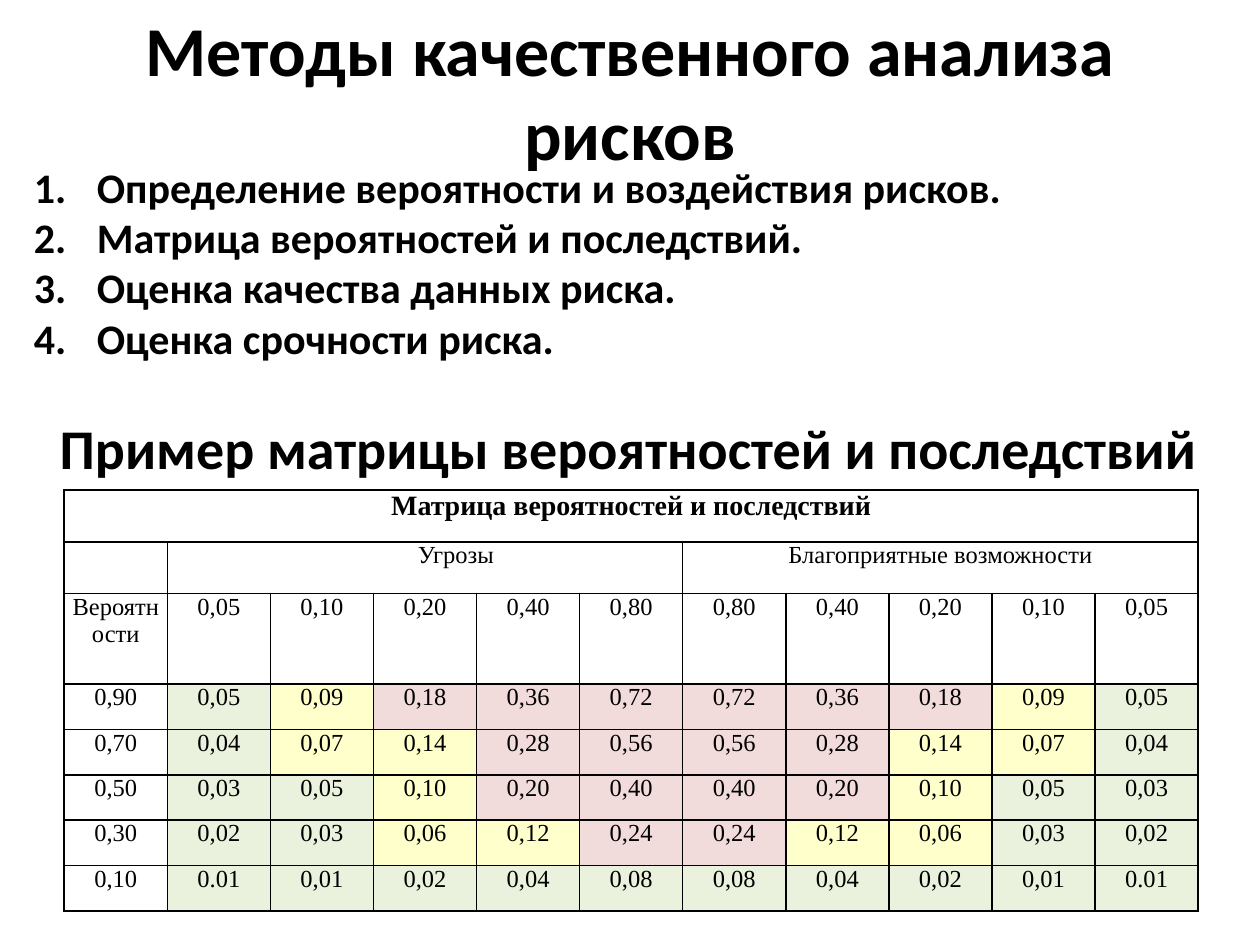
from lxml import etree
from pptx import Presentation
from pptx.dml.color import RGBColor
from pptx.enum.text import PP_ALIGN
from pptx.oxml.ns import qn
from pptx.util import Inches, Pt

CENTER = PP_ALIGN.CENTER
LEFT = PP_ALIGN.LEFT
HEADING_FONT = "Calibri"
TABLE_FONT = "Times New Roman"
COLORS = {
    "text": "000000",
    "border": "000000",
    "low": "EAF1DD",
    "medium": "FFFFCC",
    "high": "F2DBDB",
}
LEVELS = {"L": "low", "M": "medium", "H": "high"}

TITLE = "Методы качественного анализа рисков"
METHODS = [
    "Определение вероятности и воздействия рисков.",
    "Матрица вероятностей и последствий.",
    "Оценка качества данных риска.",
    "Оценка срочности риска.",
]
EXAMPLE_HEADING = "Пример матрицы вероятностей и последствий"
MATRIX_TITLE = "Матрица вероятностей и последствий"
IMPACTS = ["0,05", "0,10", "0,20", "0,40", "0,80"]
# Probability, scores of the threats, risk level of each score;
# the opportunities mirror the threats.
MATRIX = [
    ("0,90", ["0,05", "0,09", "0,18", "0,36", "0,72"], "LMHHH"),
    ("0,70", ["0,04", "0,07", "0,14", "0,28", "0,56"], "LMMHH"),
    ("0,50", ["0,03", "0,05", "0,10", "0,20", "0,40"], "LLMHH"),
    ("0,30", ["0,02", "0,03", "0,06", "0,12", "0,24"], "LLMMH"),
    ("0,10", ["0.01", "0,01", "0,02", "0,04", "0,08"], "LLLLL"),
]
ROW_HEIGHTS = [0.41, 0.41, 0.72] + [0.36] * len(MATRIX)


def mirrored(items):
    return list(items) + list(reversed(items))


def add_run(paragraph, text, size, font, bold, align):
    paragraph.alignment = align
    run = paragraph.add_run()
    run.text = text
    run.font.size = Pt(size)
    run.font.name = font
    run.font.bold = bold
    run.font.color.rgb = RGBColor.from_string(COLORS["text"])


def number_paragraph(paragraph):
    properties = paragraph._p.get_or_add_pPr()
    properties.set("marL", str(Inches(0.5)))
    properties.set("indent", str(Inches(-0.5)))
    etree.SubElement(properties, qn("a:buFont"), typeface="+mj-lt")
    etree.SubElement(properties, qn("a:buAutoNum"), type="arabicPeriod")


def add_text_frame(slide, left, top, width, height):
    box = slide.shapes.add_textbox(
        Inches(left), Inches(top), Inches(width), Inches(height))
    box.text_frame.word_wrap = True
    return box.text_frame


def add_title(slide, left, top, width, height):
    frame = add_text_frame(slide, left, top, width, height)
    add_run(frame.paragraphs[0], TITLE, 40, HEADING_FONT, True, CENTER)


def add_methods(slide, left, top, width, height):
    """Add the numbered methods and the heading of the matrix below them."""
    frame = add_text_frame(slide, left, top, width, height)
    for index, method in enumerate(METHODS):
        paragraph = frame.add_paragraph() if index else frame.paragraphs[0]
        add_run(paragraph, method, 24, HEADING_FONT, True, LEFT)
        number_paragraph(paragraph)
    heading = frame.add_paragraph()
    heading.space_before = Pt(29)
    add_run(heading, EXAMPLE_HEADING, 32, HEADING_FONT, True, CENTER)


def format_cell(cell):
    """Give a cell thin borders, narrow margins and no fill."""
    cell.margin_left = cell.margin_right = Inches(0.06)
    cell.margin_top = cell.margin_bottom = 0
    properties = cell._tc.get_or_add_tcPr()
    for side in ("lnL", "lnR", "lnT", "lnB"):
        line = etree.SubElement(properties, qn(f"a:{side}"), w=str(Pt(1)))
        fill = etree.SubElement(line, qn("a:solidFill"))
        etree.SubElement(fill, qn("a:srgbClr"), val=COLORS["border"])
    cell.fill.background()


def write_cell(cell, text, size=14, bold=False, level=None):
    add_run(cell.text_frame.paragraphs[0], text, size, TABLE_FONT, bold, CENTER)
    if level:
        cell.fill.solid()
        cell.fill.fore_color.rgb = RGBColor.from_string(COLORS[LEVELS[level]])


def add_matrix(slide, left, top, width, height):
    half = len(IMPACTS)
    column_count = 1 + 2 * half
    table = slide.shapes.add_table(
        len(ROW_HEIGHTS), column_count,
        Inches(left), Inches(top), Inches(width), Inches(height)).table
    table.first_row = table.horz_banding = False
    for column in table.columns:
        column.width = Inches(width / column_count)
    for row, row_height in zip(table.rows, ROW_HEIGHTS):
        row.height = Inches(row_height)
    for cell in table.iter_cells():
        format_cell(cell)

    table.cell(0, 0).merge(table.cell(0, column_count - 1))
    write_cell(table.cell(0, 0), MATRIX_TITLE, size=16, bold=True)
    groups = [("Угрозы", 1), ("Благоприятные возможности", 1 + half)]
    for name, first in groups:
        table.cell(1, first).merge(table.cell(1, first + half - 1))
        write_cell(table.cell(1, first), name)
    threats = table.cell(1, 1).text_frame.paragraphs[0]
    threats._p.get_or_add_pPr().set("marL", str(Inches(0.49)))

    header = ("Вероятности", IMPACTS, [None] * half)
    for row, (label, values, levels) in enumerate([header] + MATRIX, start=2):
        write_cell(table.cell(row, 0), label)
        scores = zip(mirrored(values), mirrored(levels))
        for column, (value, level) in enumerate(scores, start=1):
            write_cell(table.cell(row, column), value, level=level)


def main():
    presentation = Presentation()
    presentation.slide_width = Inches(10)
    presentation.slide_height = Inches(7.5)
    slide = presentation.slides.add_slide(presentation.slide_layouts[6])
    add_title(slide, 0.56, 0, 8.88, 1.45)
    add_methods(slide, 0.17, 1.23, 9.64, 2.66)
    add_matrix(slide, 0.51, 3.89, 9, sum(ROW_HEIGHTS))
    presentation.save("out.pptx")


if __name__ == "__main__":
    main()
